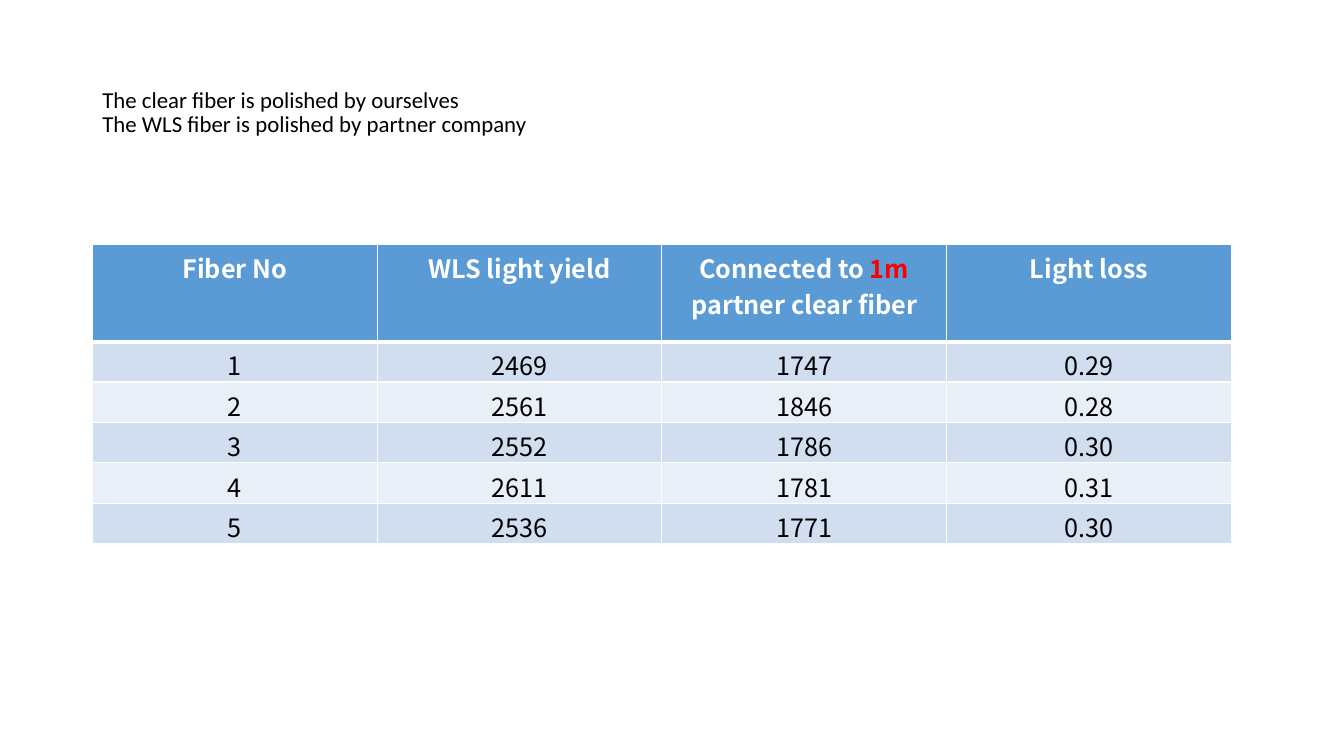
"""Build a slide with a table of fiber light yields."""
from lxml.etree import SubElement
from pptx import Presentation
from pptx.dml.color import RGBColor
from pptx.enum.text import MSO_ANCHOR as ANCHOR, PP_ALIGN as ALIGN
from pptx.oxml.ns import qn
from pptx.util import Cm, Pt

WHITE = RGBColor(0xFF, 0xFF, 0xFF)
BLACK = RGBColor(0, 0, 0)
RED = RGBColor(0xFF, 0, 0)
HEADER_BLUE = RGBColor(0x5B, 0x9B, 0xD5)
BAND_DARK = RGBColor(0xD1, 0xDE, 0xEF)
BAND_LIGHT = RGBColor(0xE9, 0xEF, 0xF7)

TITLE_FONT = "Calibri"
TABLE_FONT = "Noto Sans CJK SC"
TITLE_SIZE = Pt(16.3)
THIN, THICK = Pt(0.96), Pt(3)

TITLE = "The clear fiber is polished by ourselves\vThe WLS fiber is polished by partner company"
HEADERS = [
    [("Fiber No", WHITE)],
    [("WLS light yield", WHITE)],
    [("Connected to ", WHITE), ("1m", RED), (" partner clear fiber", WHITE)],
    [("Light loss", WHITE)],
]
FIBERS = [
    ("1", "2469", "1747", "0.29"),
    ("2", "2561", "1846", "0.28"),
    ("3", "2552", "1786", "0.30"),
    ("4", "2611", "1781", "0.31"),
    ("5", "2536", "1771", "0.30"),
]


def style_run(r, font, size, color, bold=False):
    """Set the font of a run."""
    r.font.name = font
    r.font.size = size
    r.font.bold = bold
    r.font.color.rgb = color


def add_title(s):
    """Add the two-line title."""
    tf = s.shapes.add_textbox(Cm(2.33), Cm(1.01), Cm(29.21), Cm(3.68)).text_frame
    tf.word_wrap = True
    tf.vertical_anchor = ANCHOR.MIDDLE
    p = tf.paragraphs[0]
    p.text = TITLE
    p.line_spacing = 0.9
    for r in p.runs:
        style_run(r, TITLE_FONT, TITLE_SIZE, BLACK)
    for br in p._p.findall(qn("a:br")):
        SubElement(br, qn("a:rPr"), sz=str(TITLE_SIZE.centipoints))


def add_borders(cell, top, bottom):
    """Give a cell white borders."""
    tc_pr = cell._tc.get_or_add_tcPr()
    for side, width in (("L", THIN), ("R", THIN), ("T", top), ("B", bottom)):
        ln = SubElement(tc_pr, qn(f"a:ln{side}"), w=str(width))
        SubElement(SubElement(ln, qn("a:solidFill")), qn("a:srgbClr"), val=str(WHITE))


def fill_cell(cell, parts, fill, bold):
    """Write centred coloured text into a filled cell."""
    cell.fill.solid()
    cell.fill.fore_color.rgb = fill
    p = cell.text_frame.paragraphs[0]
    p.alignment = ALIGN.CENTER
    for text, color in parts:
        r = p.add_run()
        r.text = text
        style_run(r, TABLE_FONT, Pt(18), color, bold)


def add_fiber_table(s):
    """Add the table of light yields and losses."""
    rows = [HEADERS] + [[[(value, BLACK)] for value in fiber] for fiber in FIBERS]
    table = s.shapes.add_table(len(rows), len(HEADERS), Cm(2.33), Cm(6.15), Cm(28.7), Cm(7.42)).table
    for i, row in enumerate(rows):
        header = i == 0
        table.rows[i].height = Cm(2.46) if header else Cm(0.99)
        fill = HEADER_BLUE if header else (BAND_LIGHT, BAND_DARK)[i % 2]
        for j, parts in enumerate(row):
            cell = table.cell(i, j)
            add_borders(cell, THICK if i == 1 else THIN, THICK if header else THIN)
            fill_cell(cell, parts, fill, header)


def main():
    """Build and save the slide."""
    prs = Presentation()
    prs.slide_width, prs.slide_height = Cm(33.87), Cm(19.05)
    s = prs.slides.add_slide(prs.slide_layouts[6])
    add_title(s)
    add_fiber_table(s)
    prs.save("out.pptx")


if __name__ == "__main__":
    main()
